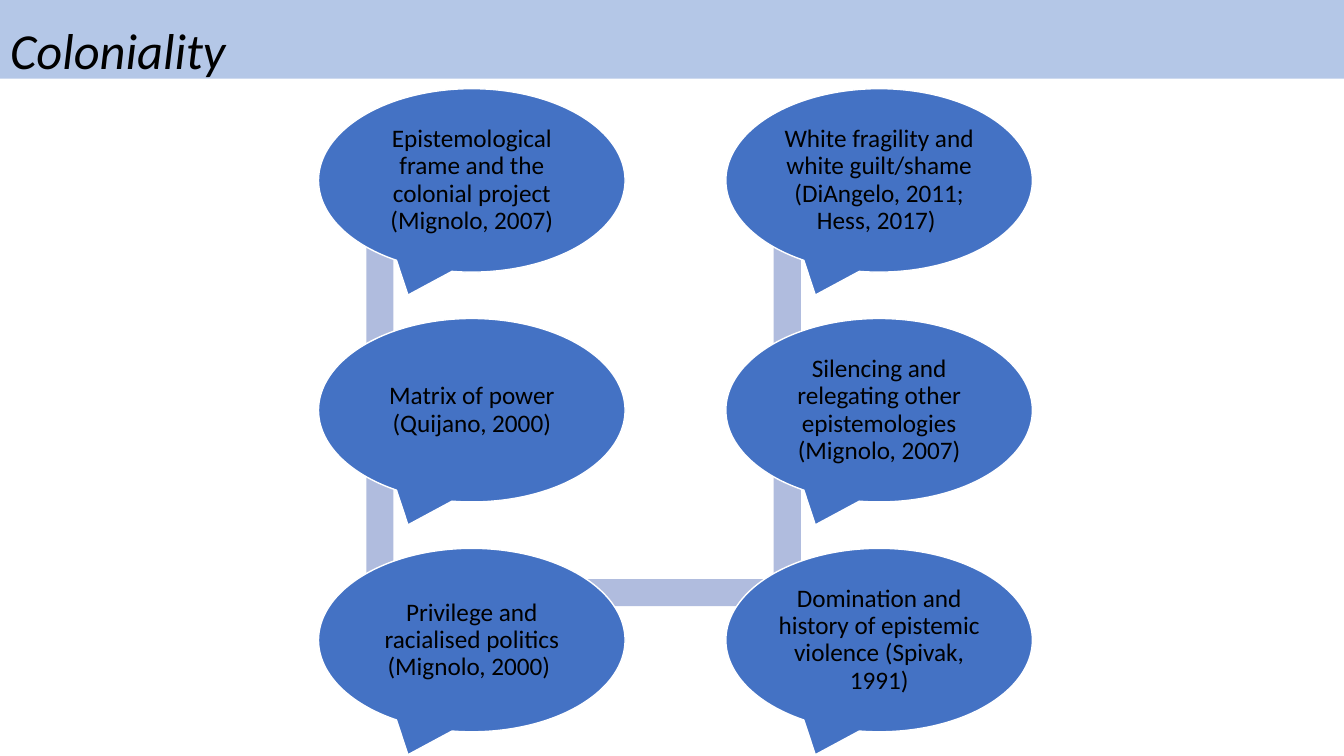
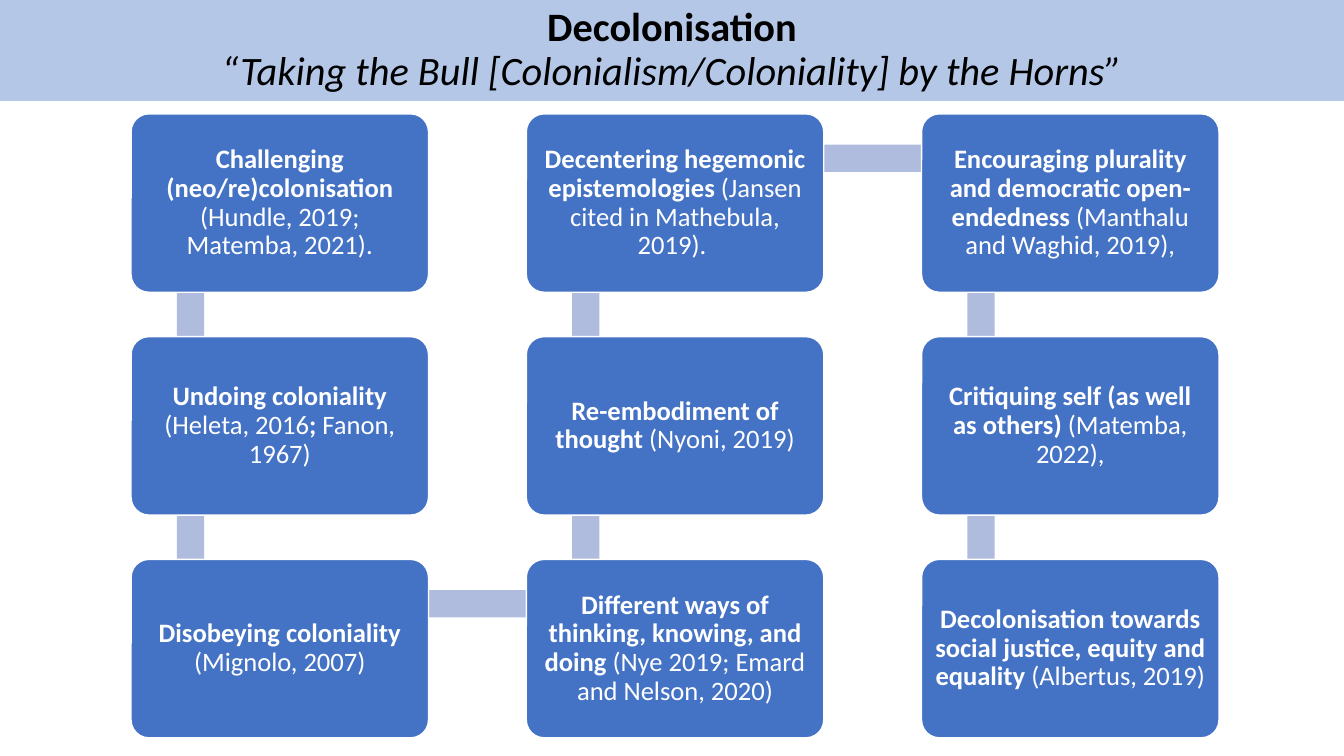
from pptx import Presentation
from pptx.dml.color import RGBColor
from pptx.enum.shapes import MSO_SHAPE
from pptx.enum.text import MSO_ANCHOR, MSO_AUTO_SIZE, PP_ALIGN
from pptx.util import Inches, Pt

RECT = MSO_SHAPE.RECTANGLE
ROUNDED = MSO_SHAPE.ROUNDED_RECTANGLE
CALLOUT = MSO_SHAPE.OVAL_CALLOUT
LEFT, CENTER = PP_ALIGN.LEFT, PP_ALIGN.CENTER
MIDDLE = MSO_ANCHOR.MIDDLE
TITLE_ONLY = 5
PLAIN, BOLD, ITALIC = "plain", "bold", "italic"


def rgb(value):
    return RGBColor.from_string(value)


class Deck:
    """Shared style, and the slide being built."""
    font = "Calibri"
    band, box, link = "B4C7E7", "4472C4", "B0BCDE"
    black, white = "000000", "FFFFFF"
    width, height = 13.33, 7.5
    link_size = 0.27

    def __init__(self):
        self.prs = Presentation()
        self.prs.slide_width = Inches(self.width)
        self.prs.slide_height = Inches(self.height)
        self.s = None

    def new_slide(self):
        self.s = self.prs.slides.add_slide(self.prs.slide_layouts[TITLE_ONLY])

    def text(self, sp, lines, size, color, align, inset):
        """Write one paragraph; each line is a list of (text, style) runs."""
        tf = sp.text_frame
        tf.word_wrap = True
        tf.auto_size = MSO_AUTO_SIZE.NONE
        tf.vertical_anchor = MIDDLE
        tf.margin_left, tf.margin_top, tf.margin_right, tf.margin_bottom = (
            Inches(v) for v in inset)
        p = tf.paragraphs[0]
        p.alignment = align
        p.line_spacing = 0.9
        p.space_before = Pt(0)
        for i, line in enumerate(lines):
            if i:
                p.add_line_break()
            for words, style in line:
                r = p.add_run()
                r.text = words
                r.font.name = self.font
                r.font.size = Pt(size)
                r.font.color.rgb = rgb(color)
                r.font.bold = style == BOLD
                r.font.italic = style == ITALIC

    def title(self, lines, height, size, align, top_inset):
        """Title in a full-width band."""
        sp = self.s.shapes.title
        sp.left, sp.top = Inches(0), Inches(0)
        sp.width, sp.height = Inches(self.width), Inches(height)
        sp.fill.solid()
        sp.fill.fore_color.rgb = rgb(self.band)
        self.text(sp, lines, size, self.black, align, (0.1, top_inset, 0.1, 0))

    def shape(self, kind, x, y, w, h, fill):
        sp = self.s.shapes.add_shape(kind, Inches(x), Inches(y), Inches(w), Inches(h))
        sp.shadow.inherit = False
        sp.fill.solid()
        sp.fill.fore_color.rgb = rgb(fill)
        sp.line.fill.background()
        return sp

    def link_bar(self, start, end):
        """Bar centred on the straight line between two points."""
        half = self.link_size / 2
        (x1, x2), (y1, y2) = (sorted(pair) for pair in zip(start, end))
        if x1 == x2:
            self.shape(RECT, x1 - half, y1, self.link_size, y2 - y1, self.link)
        else:
            self.shape(RECT, x1, y1 - half, x2 - x1, self.link_size, self.link)

    def box_with_text(self, kind, x, y, w, h, runs, size, color, inset):
        sp = self.shape(kind, x, y, w, h, self.box)
        sp.line.color.rgb = rgb(self.white)
        sp.line.width = Pt(1)
        if kind == ROUNDED:
            sp.adjustments[0] = 0.1
        self.text(sp, [runs], size, color, CENTER, (inset,) * 4)

    def snake(self, kind, items, origin, pitch, box, size, color, inset, rows=3):
        """Boxes running down one column and up the next, joined by bars."""
        w, h = box
        spots = []
        for i in range(len(items)):
            col, row = divmod(i, rows)
            if col % 2:
                row = rows - 1 - row
            spots.append((origin[0] + col * pitch[0], origin[1] + row * pitch[1]))
        joints = [(x + 0.2 * w, y + 0.44) for x, y in spots]
        for start, end in zip(joints, joints[1:]):
            self.link_bar(start, end)
        for (x, y), runs in zip(spots, items):
            self.box_with_text(kind, x, y, w, h, runs, size, color, inset)


COLONIALITY = [
    "Epistemological frame and the colonial project (Mignolo, 2007)",
    "Matrix of power (Quijano, 2000)",
    "Privilege and racialised politics (Mignolo, 2000) ",
    "Domination and history of epistemic violence (Spivak, 1991)",
    "Silencing and relegating other epistemologies (Mignolo, 2007)",
    "White fragility and white guilt/shame (DiAngelo, 2011; Hess, 2017) ",
]

DECOLONISATION = [
    [("Challenging (neo/re)colonisation ", BOLD),
     ("(Hundle, 2019; Matemba, 2021).", PLAIN)],
    [("Undoing coloniality ", BOLD), ("(Heleta, 2016", PLAIN),
     ("; ", BOLD), ("Fanon, 1967)", PLAIN)],
    [("Disobeying coloniality ", BOLD), ("(Mignolo, 2007)", PLAIN)],
    [("Different ways of thinking, knowing, and doing ", BOLD),
     ("(Nye 2019; Emard and Nelson, 2020)", PLAIN)],
    [("Re-embodiment of thought ", BOLD), ("(Nyoni, 2019)", PLAIN)],
    [("Decentering hegemonic epistemologies", BOLD),
     (" (Jansen cited in Mathebula, 2019). ", PLAIN)],
    [("Encouraging plurality and democratic open-endedness ", BOLD),
     ("(Manthalu and Waghid, 2019),", PLAIN)],
    [("Critiquing self (as well as others) ", BOLD), ("(Matemba, 2022),", PLAIN)],
    [("Decolonisation towards social justice, equity and equality ", BOLD),
     ("(Albertus, 2019)", PLAIN)],
]


def main():
    deck = Deck()

    # Coloniality: two columns of callouts
    deck.new_slide()
    deck.title([[("Coloniality", ITALIC)]], 0.78, 36, LEFT, 0.28)
    deck.snake(CALLOUT, [[(words, PLAIN)] for words in COLONIALITY],
               origin=(3.16, 0.88), pitch=(4.04, 2.28), box=(3.04, 1.82),
               size=18, color=deck.black, inset=0.07)

    # Decolonisation: three columns of rounded boxes
    deck.new_slide()
    deck.title([[("Decolonisation", BOLD)],
                [("“Taking the Bull [Colonialism/Coloniality] by the Horns”", ITALIC)]],
               1, 28.8, CENTER, 0)
    deck.snake(ROUNDED, DECOLONISATION,
               origin=(1.3, 1.13), pitch=(3.92, 2.21), box=(2.95, 1.77),
               size=19, color=deck.white, inset=0.08)

    deck.prs.save("out.pptx")


if __name__ == "__main__":
    main()
